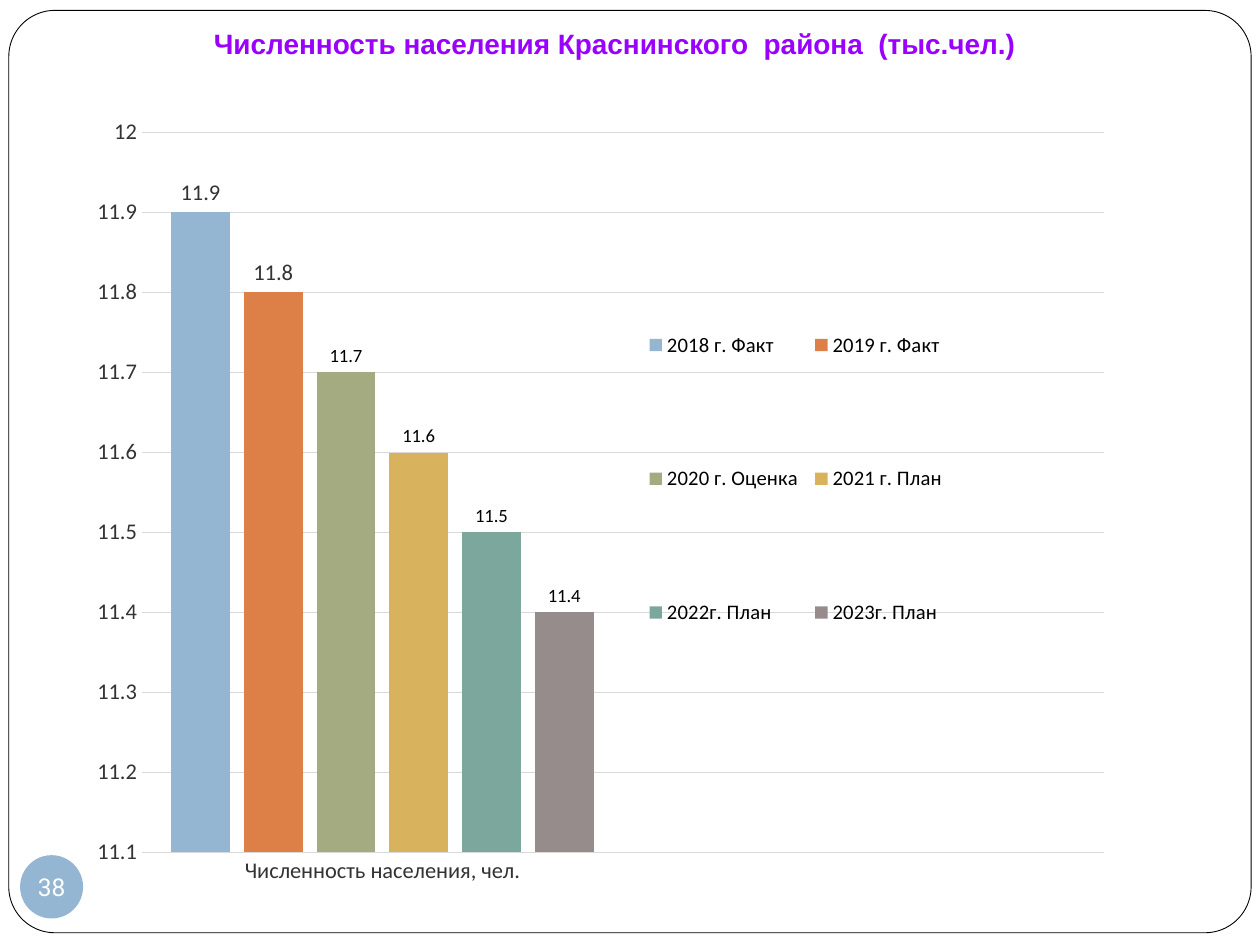
from pptx import Presentation, oxml
from pptx import util as u
from pptx.chart import data
from pptx.dml.color import RGBColor
from pptx.enum import chart as ch, shapes, text
from pptx.oxml import ns

WIDE, HIGH = u.Inches(10), u.Inches(7.5)
WHITE = RGBColor(255, 255, 255)
BLACK = RGBColor(0, 0, 0)
DARK = RGBColor(0x33, 0x33, 0x33)
GREY = RGBColor(0xD9, 0xD9, 0xD9)
VIOLET = RGBColor(0x99, 0x00, 0xFF)
BLUE = RGBColor(0x94, 0xB6, 0xD2)
ORANGE = RGBColor(0xDD, 0x80, 0x47)
OLIVE = RGBColor(0xA5, 0xAB, 0x81)
GOLD = RGBColor(0xD8, 0xB2, 0x5C)
TEAL = RGBColor(0x7B, 0xA7, 0x9D)
TAUPE = RGBColor(0x96, 0x8C, 0x8C)

YEARS = [
    ("2018 г. Факт", 11.9, BLUE, 12.8, DARK),
    ("2019 г. Факт", 11.8, ORANGE, 12.9, DARK),
    ("2020 г. Оценка", 11.7, OLIVE, 10.7, BLACK),
    ("2021 г. План", 11.6, GOLD, 10.7, BLACK),
    ("2022г. План", 11.5, TEAL, 10.7, BLACK),
    ("2023г. План", 11.4, TAUPE, 10.7, BLACK),
]


def box(x, y, w, h):
    """Turn shares of the slide's size into lengths."""
    return int(x * WIDE), int(y * HIGH), int(w * WIDE), int(h * HIGH)


def put(item, **vals):
    for name, val in vals.items():
        setattr(item, name, val)


def style(font, size, color, name="Calibri", bold=False):
    put(font, size=u.Pt(size), name=name, bold=bold)
    font.color.rgb = color


def add_shape(slide, kind, area, fill):
    shape = slide.shapes.add_shape(kind, *area)
    shape.shadow.inherit = False
    shape.fill.solid()
    shape.fill.fore_color.rgb = fill
    shape.line.fill.background()
    return shape


def write(frame, words, size, color, name, bold=False, **vals):
    put(frame, margin_left=0, margin_right=0, margin_top=0, margin_bottom=0)
    put(frame, **vals)
    para = frame.paragraphs[0]
    para.alignment = text.PP_ALIGN.CENTER
    run = para.add_run()
    run.text = words
    style(run.font, size, color, name, bold)


def place(part, spot, area, inner=False):
    """Fix a chart part at shares of the chart's size."""
    for old in part.findall(ns.qn("c:layout")):
        part.remove(old)
    goal = '<c:layoutTarget val="inner"/>' if inner else ""
    modes = "".join(f'<c:{key}Mode val="edge"/>' for key in "xy")
    sides = "".join(f'<c:{key} val="{val}"/>' for key, val in zip("xywh", area))
    part.insert(spot, oxml.parse_xml(
        f'<c:layout {ns.nsdecls("c")}><c:manualLayout>'
        f"{goal}{modes}{sides}</c:manualLayout></c:layout>"))


def set_axes(chart):
    for axis in (chart.category_axis, chart.value_axis):
        put(axis, major_tick_mark=ch.XL_TICK_MARK.NONE,
            minor_tick_mark=ch.XL_TICK_MARK.NONE)
        style(axis.tick_labels.font, 12.8, DARK)
    line = chart.category_axis.format.line
    line.width = u.Pt(1.07)
    line.color.rgb = GREY
    axis = chart.value_axis
    put(axis, minimum_scale=11.1, maximum_scale=12, major_unit=0.1,
        has_major_gridlines=True)
    axis.format.line.fill.background()
    grid = axis.major_gridlines.format.line
    grid.width = u.Pt(0.27)
    grid.color.rgb = GREY


def set_bars(plot):
    put(plot, gap_width=100, overlap=-24, vary_by_categories=False)
    for bar, (_, _, fill, size, color) in zip(plot.series, YEARS):
        bar.format.fill.solid()
        bar.format.fill.fore_color.rgb = fill
        tags = bar.data_labels
        put(tags, show_value=True, position=ch.XL_LABEL_POSITION.OUTSIDE_END)
        style(tags.font, size, color)


def add_chart(slide):
    facts = data.CategoryChartData()
    facts.categories = ["Численность населения, чел.", ""]
    for name, val, *_ in YEARS:
        facts.add_series(name, [val, None])
    chart = slide.shapes.add_chart(
        ch.XL_CHART_TYPE.COLUMN_CLUSTERED,
        *box(0.047, 0.104, 0.886, 0.885), facts).chart
    put(chart, has_title=False, has_legend=True)
    style(chart.font, 10.7, BLACK)
    set_axes(chart)
    set_bars(chart.plots[0])
    key = chart.legend
    put(key, position=ch.XL_LEGEND_POSITION.RIGHT, include_in_layout=False)
    style(key.font, 11.8, BLACK)
    root = chart.element
    place(root.find(".//" + ns.qn("c:plotArea")), 0,
          (0.074, 0.041, 0.862, 0.861), True)
    place(root.find(".//" + ns.qn("c:legend")), 1, (0.52, 0.15, 0.28, 0.61))


def add_frame(slide):
    frame = add_shape(slide, shapes.MSO_SHAPE.ROUNDED_RECTANGLE,
                      box(0.007, 0.011, 0.986, 0.976), WHITE)
    frame.adjustments[0] = 0.05
    frame.line.color.rgb = BLACK
    frame.line.width = u.Pt(0.5)


def add_title(slide):
    title = slide.shapes.add_textbox(*box(0.055, 0.021, 0.866, 0.049))
    write(title.text_frame, "Численность населения Краснинского  района  (тыс.чел.)",
          16, VIOLET, "Arial", True, word_wrap=True,
          margin_top=u.Inches(0.05), margin_bottom=u.Inches(0.05),
          auto_size=text.MSO_AUTO_SIZE.SHAPE_TO_FIT_TEXT)


def add_number(slide):
    disc = add_shape(slide, shapes.MSO_SHAPE.OVAL,
                     box(0.016, 0.905, 0.05, 0.067), BLUE)
    write(disc.text_frame, "38", 14, WHITE, "Roboto", word_wrap=False,
          vertical_anchor=text.MSO_ANCHOR.MIDDLE)


def main():
    deck = Presentation()
    put(deck, slide_width=WIDE, slide_height=HIGH)
    slide = deck.slides.add_slide(deck.slide_layouts[6])
    for add in (add_frame, add_chart, add_title, add_number):
        add(slide)
    deck.save("out.pptx")


if __name__ == "__main__":
    main()
